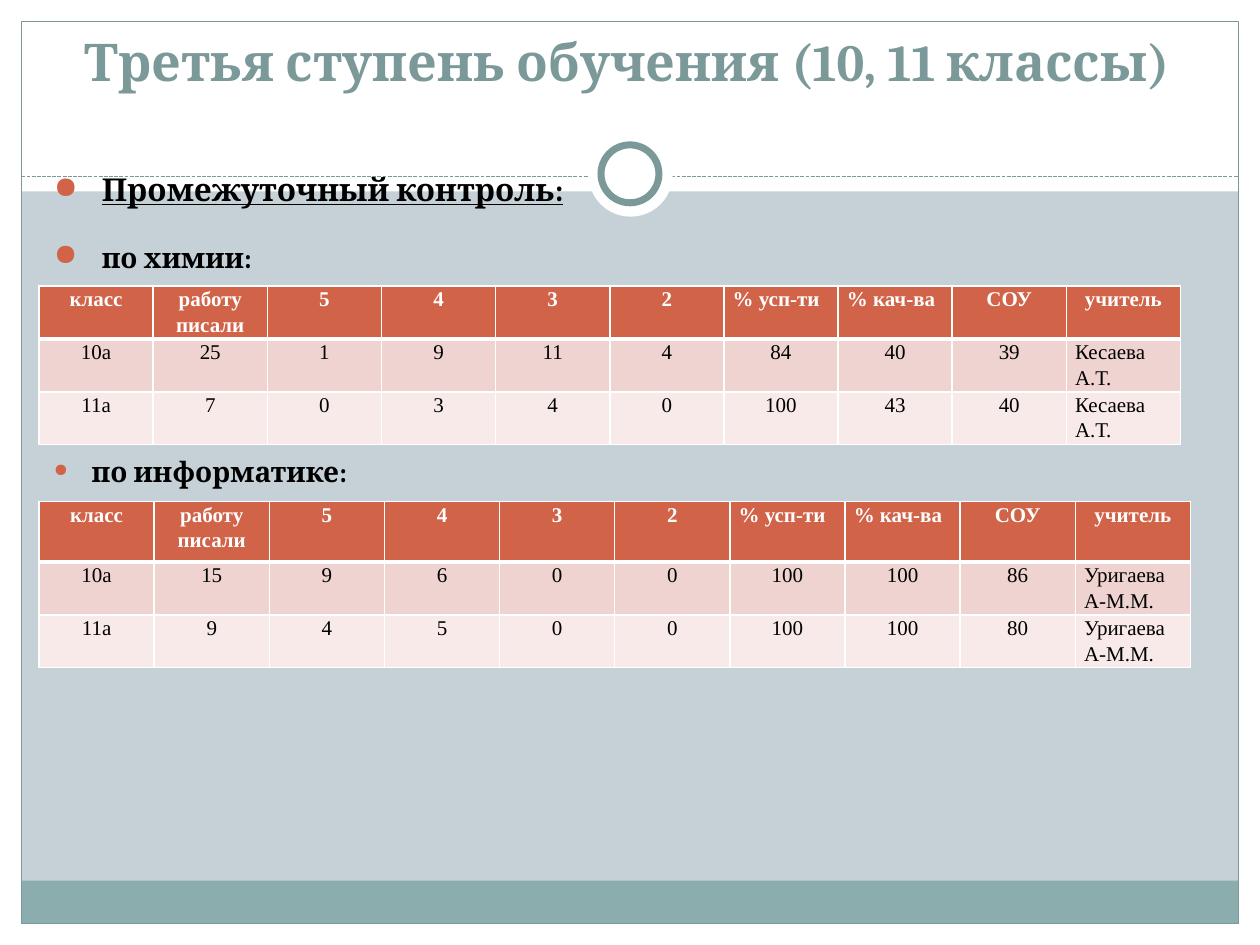
from lxml.etree import SubElement
from pptx import Presentation
from pptx.dml.color import RGBColor
from pptx.enum.dml import MSO_LINE
from pptx.enum.shapes import MSO_CONNECTOR, MSO_SHAPE
from pptx.enum.text import MSO_ANCHOR, PP_ALIGN
from pptx.oxml.ns import qn
from pptx.util import Inches, Pt

WHITE, BLACK = "FFFFFF", "000000"
SLATE, TEAL, ORANGE = "7C999A", "8CADAE", "D16349"
ROW_FILLS = [ORANGE, "EED3D0", "F7EAE9"]
HEADER = ["класс", "работу писали", "5", "4", "3", "2",
          "% усп-ти", "% кач-ва", "СОУ", "учитель"]


def color(value):
    return RGBColor.from_string(value)


def add_solid(parent, value):
    """Append an a:solidFill of the given colour to an XML element."""
    fill = SubElement(parent, qn("a:solidFill"))
    SubElement(fill, qn("a:srgbClr"), val=value)


deck = Presentation()
deck.slide_width, deck.slide_height = Inches(10), Inches(7.5)
page = deck.slides.add_slide(deck.slide_layouts[6])
page.background.fill.solid()
page.background.fill.fore_color.rgb = color("C5D1D7")

# Frame, bands and the ring: kind, position, fill, line width
RECT, OVAL = MSO_SHAPE.RECTANGLE, MSO_SHAPE.OVAL
decorations = [
    (RECT, (0, 7.33, 10, 0.17), WHITE, 0),
    (RECT, (0, 0, 10, 1.52), WHITE, 0),
    (RECT, (0, 0, 0.17, 7.5), WHITE, 0),
    (RECT, (9.83, 0, 0.17, 7.5), WHITE, 0),
    (RECT, (0.17, 6.99, 9.66, 0.34), TEAL, 0),
    (RECT, (0.17, 0.17, 9.66, 7.16), None, 0.75),
    (OVAL, (4.67, 1.05, 0.67, 0.67), WHITE, 0),
    (OVAL, (4.77, 1.15, 0.46, 0.46), WHITE, 4),
]
for kind, position, fill, line_width in decorations:
    if kind == OVAL and not line_width:
        # The dashed divider lies behind the ring
        divider = page.shapes.add_connector(
            MSO_CONNECTOR.STRAIGHT, Inches(0.17), Inches(1.4), Inches(9.83), Inches(1.4))
        divider.line.color.rgb = color(SLATE)
        divider.line.width = Pt(0.75)
        divider.line.dash_style = MSO_LINE.SQUARE_DOT
        SubElement(divider._element.spPr, qn("a:effectLst"))
    shape = page.shapes.add_shape(kind, *map(Inches, position))
    shape.shadow.inherit = False
    if fill:
        shape.fill.solid()
        shape.fill.fore_color.rgb = color(fill)
    else:
        shape.fill.background()
    if line_width:
        shape.line.color.rgb = color(SLATE)
        shape.line.width = Pt(line_width)
    else:
        shape.line.fill.background()

title = page.shapes.add_textbox(Inches(0.31), Inches(0.18), Inches(9.33), Inches(0.6))
title.text_frame.word_wrap = True
title.text_frame.vertical_anchor = MSO_ANCHOR.MIDDLE
para = title.text_frame.paragraphs[0]
para.text = "Третья ступень обучения (10, 11 классы)"
para.alignment = PP_ALIGN.CENTER
para.font.name, para.font.size, para.font.bold = "Cambria", Pt(29.7), True
para.font.color.rgb = color(SLATE)

# Bulleted headings: text, size, space before, indent, bullet percentage
headings = [
    ("Промежуточный контроль:", 18, 0, 0.38, 96),
    ("по химии:", 16, 18.5, 0.38, 106),
    ("по информатике:", 16, 103.5, 0.3, 64),
]
body = page.shapes.add_textbox(Inches(0.33), Inches(1.3), Inches(9.3), Inches(2.7))
body.text_frame.word_wrap = True
for index, (text, size, space, indent, bullet_size) in enumerate(headings):
    para = body.text_frame.paragraphs[0] if index == 0 else body.text_frame.add_paragraph()
    para.text = text
    para.space_before = Pt(space)
    properties = para._p.get_or_add_pPr()
    properties.set("marL", str(Inches(indent)))
    properties.set("indent", str(-Inches(indent)))
    bullet_color = SubElement(properties, qn("a:buClr"))
    SubElement(bullet_color, qn("a:srgbClr"), val=ORANGE)
    SubElement(properties, qn("a:buSzPct"), val=str(bullet_size * 1000))
    SubElement(properties, qn("a:buChar"), char="●")
    para.font.name, para.font.size, para.font.bold = "Cambria", Pt(size), True
    para.font.underline = index == 0
    para.font.color.rgb = color(BLACK)

# Result tables: top, width, row heights, rows
results = [
    (2.27, 9.06, (0.42, 0.42, 0.42), [
        ["10а", "25", "1", "9", "11", "4", "84", "40", "39", "Кесаева А.Т."],
        ["11а", "7", "0", "3", "4", "0", "100", "43", "40", "Кесаева А.Т."]]),
    (3.98, 9.14, (0.48, 0.42, 0.42), [
        ["10а", "15", "9", "6", "0", "0", "100", "100", "86", "Уригаева А-М.М."],
        ["11а", "9", "4", "5", "0", "0", "100", "100", "80", "Уригаева А-М.М."]]),
]
for top, width, heights, rows in results:
    table = page.shapes.add_table(
        len(heights), len(HEADER), Inches(0.31), Inches(top),
        Inches(width), Inches(sum(heights))).table
    for row, height in zip(table.rows, heights):
        row.height = Inches(height)
    for r, values in enumerate([HEADER] + rows):
        for c, value in enumerate(values):
            cell = table.cell(r, c)
            cell.margin_left = cell.margin_right = Inches(0.07)
            cell.margin_top = cell.margin_bottom = 0
            for side in "LRTB":
                thick = (r, side) in [(0, "B"), (1, "T")]
                border = SubElement(cell._tc.get_or_add_tcPr(), qn(f"a:ln{side}"),
                                    w=str(Pt(3 if thick else 1)))
                add_solid(border, WHITE)
            cell.fill.solid()
            cell.fill.fore_color.rgb = color(ROW_FILLS[r])
            para = cell.text_frame.paragraphs[0]
            para.text = value
            # A fixed pitch keeps two lines inside the row height
            para.line_spacing = Pt(14.5)
            left_aligned = c in (6, 7) if r == 0 else c == 9
            para.alignment = PP_ALIGN.LEFT if left_aligned else PP_ALIGN.CENTER
            para.font.name, para.font.size = "Times New Roman", Pt(12)
            para.font.bold = r == 0
            para.font.color.rgb = color(WHITE if r == 0 else BLACK)

deck.save("out.pptx")
